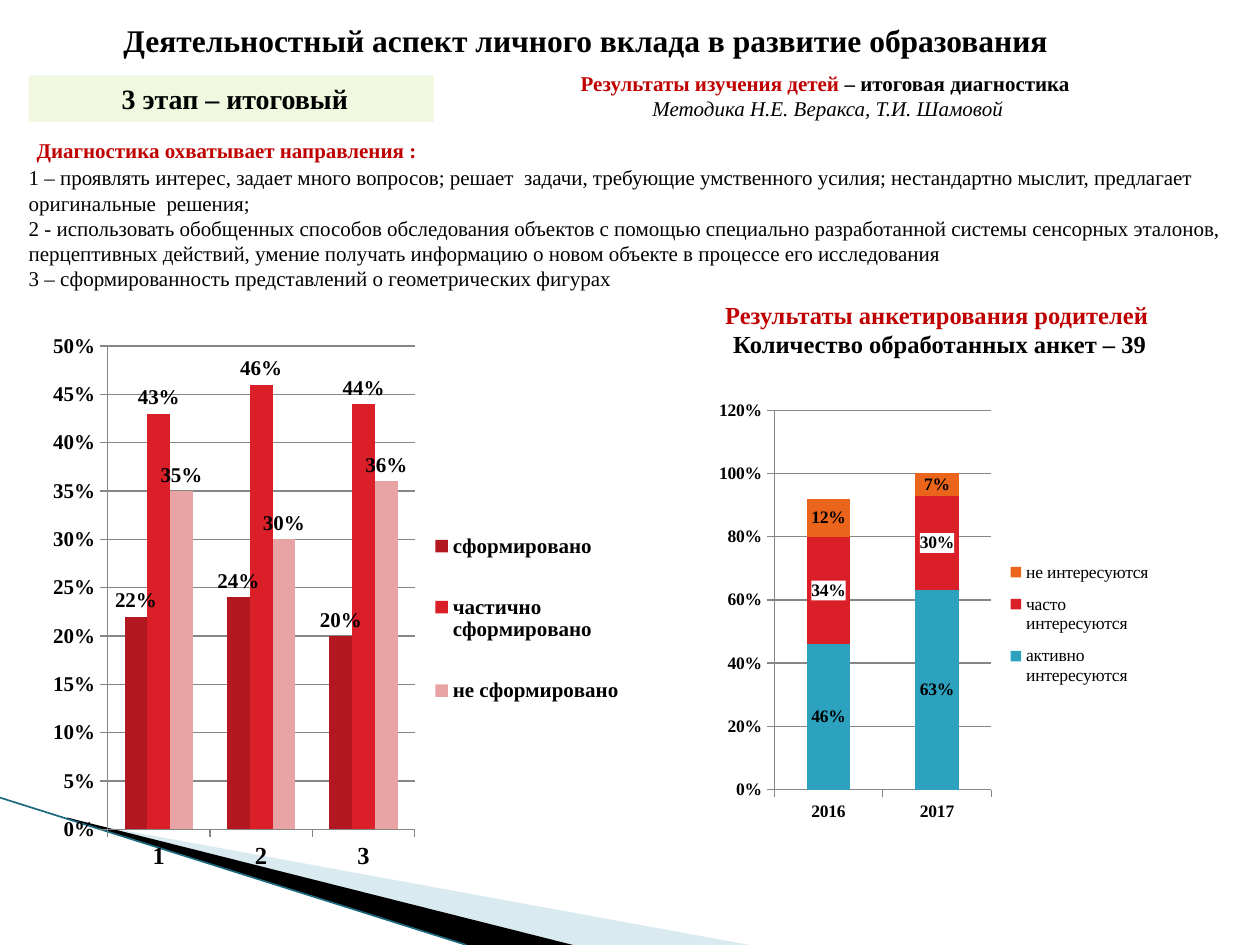
from dataclasses import dataclass

from lxml.etree import SubElement
from pptx import Presentation
from pptx.chart.data import CategoryChartData
from pptx.dml.color import RGBColor
from pptx.enum.chart import XL_CHART_TYPE, XL_LABEL_POSITION, XL_LEGEND_POSITION, XL_TICK_MARK
from pptx.enum.shapes import MSO_CONNECTOR, MSO_SHAPE
from pptx.enum.text import MSO_ANCHOR, PP_ALIGN
from pptx.oxml import parse_xml
from pptx.oxml.ns import nsdecls, qn
from pptx.util import Cm, Pt


@dataclass(frozen=True)
class Theme:
    font: str = "Times New Roman"
    black: str = "000000"
    white: str = "FFFFFF"
    accent: str = "C00000"
    stage: str = "F0F9DF"
    grid: str = "868686"
    pale_wedge: str = "A0CBDC"
    edge: str = "1A6A7F"
    title: int = 18
    stage_size: int = 16
    heading: int = 14
    body: int = 12
    small: int = 10


@dataclass(frozen=True)
class Box:
    left: float
    top: float
    width: float
    height: float

    def lengths(self):
        return [Cm(value) for value in (self.left, self.top, self.width, self.height)]


THEME = Theme()
CHILD_SERIES = [
    ("сформировано", (0.22, 0.24, 0.20), "B31820"),
    ("частично сформировано", (0.43, 0.46, 0.44), "DA1F28"),
    ("не сформировано", (0.35, 0.30, 0.36), "E8A3A5"),
]
PARENT_SERIES = [
    ("активно интересуются", (0.46, 0.63), "2DA2BF"),
    ("часто интересуются", (0.34, 0.30), "DA1F28"),
    ("не интересуются", (0.12, 0.07), "EB641B"),
]


def rgb(value):
    return RGBColor.from_string(value)


def style_font(font, size, color=THEME.black, bold=False, italic=False):
    font.name, font.size, font.bold, font.italic = THEME.font, Pt(size), bold, italic
    font.color.rgb = rgb(color)


def add_text(page, box, paragraphs, fill=THEME.white, align=PP_ALIGN.CENTER, wrap=True):
    """Each paragraph is a list of (text, size, color, bold, italic) runs."""
    shape = page.shapes.add_shape(MSO_SHAPE.RECTANGLE, *box.lengths())
    shape.shadow.inherit = False
    shape.fill.solid()
    shape.fill.fore_color.rgb = rgb(fill)
    shape.line.fill.background()
    frame = shape.text_frame
    frame.word_wrap = wrap
    frame.vertical_anchor = MSO_ANCHOR.TOP
    for index, spans in enumerate(paragraphs):
        para = frame.paragraphs[0] if index == 0 else frame.add_paragraph()
        para.alignment = align
        for text, *style in spans:
            span = para.add_run()
            span.text = text
            style_font(span.font, *style)


def add_corner(page, box):
    """Two wedges and a thin edge line rising to the left."""
    pale = [(1.4, 0.46), (box.width, box.height), (11.5, box.height), (1.4, 0.43)]
    dark = [(1.35, 0.4), (11.55, box.height), (9.4, box.height), (1.37, 0.43)]
    for points, color, alpha in ((pale, THEME.pale_wedge, 40), (dark, THEME.black, 100)):
        corners = [(Cm(box.left + x), Cm(box.top + y)) for x, y in points]
        builder = page.shapes.build_freeform(*corners[0])
        builder.add_line_segments(corners[1:], close=True)
        wedge = builder.convert_to_shape()
        wedge.shadow.inherit = False
        wedge.line.fill.background()
        wedge.fill.solid()
        wedge.fill.fore_color.rgb = rgb(color)
        if alpha < 100:
            tint = next(wedge._element.spPr.iter(qn("a:srgbClr")))
            SubElement(tint, qn("a:alpha")).set("val", str(alpha * 1000))
    edge = page.shapes.add_connector(
        MSO_CONNECTOR.STRAIGHT, Cm(box.left), Cm(box.top),
        Cm(box.left + 9.4), Cm(box.top + box.height))
    edge.line.color.rgb = rgb(THEME.edge)
    edge.line.width = Pt(0.95)
    SubElement(edge._element.spPr, qn("a:effectLst"))


def set_layout(parent, position, fractions, inner=False):
    """Fix a plot area or legend at fractions (x, y, w, h) of its chart."""
    previous = parent.find(qn("c:layout"))
    if previous is not None:
        parent.remove(previous)
    target = '<c:layoutTarget val="inner"/>' if inner else ""
    modes = '<c:xMode val="edge"/><c:yMode val="edge"/>'
    sizes = "".join(f'<c:{key} val="{value}"/>' for key, value in zip("xywh", fractions))
    parent.insert(position, parse_xml(
        f'<c:layout {nsdecls("c")}><c:manualLayout>{target}{modes}{sizes}'
        "</c:manualLayout></c:layout>"))


def fill_labels(labels, color):
    backing = parse_xml(
        f'<c:spPr {nsdecls("c", "a")}><a:solidFill><a:srgbClr val="{color}"/>'
        "</a:solidFill></c:spPr>")
    labels._element.find(qn("c:txPr")).addprevious(backing)


def add_columns(page, box, kind, categories, series_rows, size, category_size,
                top_value, step, plot_area, legend_area, bold_legend):
    data = CategoryChartData(number_format="0%")
    data.categories = categories
    for name, values, _ in series_rows:
        data.add_series(name, values)
    chart = page.shapes.add_chart(kind, *box.lengths(), data).chart
    style_font(chart.font, size)
    chart.has_title = False
    stacked = kind == XL_CHART_TYPE.COLUMN_STACKED
    plot = chart.plots[0]
    plot.vary_by_categories = False
    plot.gap_width = 150
    plot.overlap = 100 if stacked else 0
    for series, (_, _, color) in zip(plot.series, series_rows):
        series.format.fill.solid()
        series.format.fill.fore_color.rgb = rgb(color)
        series.invert_if_negative = False
        labels = series.data_labels
        style_font(labels.font, size, bold=True)
        labels.show_value = True
        labels.number_format, labels.number_format_is_linked = "0%", False
        labels.position = XL_LABEL_POSITION.CENTER if stacked else XL_LABEL_POSITION.OUTSIDE_END
    if stacked:
        fill_labels(plot.series[1].data_labels, THEME.white)

    values = chart.value_axis
    values.minimum_scale, values.maximum_scale, values.major_unit = 0, top_value, step
    values.major_gridlines.format.line.color.rgb = rgb(THEME.grid)
    values.tick_labels.number_format = "0%"
    values.tick_labels.number_format_is_linked = False
    for axis, label_size in ((values, size), (chart.category_axis, category_size)):
        axis.major_tick_mark = XL_TICK_MARK.OUTSIDE
        axis.format.line.color.rgb = rgb(THEME.grid)
        style_font(axis.tick_labels.font, label_size, bold=True)
    chart.has_legend = True
    chart.legend.position = XL_LEGEND_POSITION.RIGHT
    chart.legend.include_in_layout = False
    style_font(chart.legend.font, size, bold=bold_legend)
    set_layout(chart.legend._element, 1, legend_area)
    set_layout(chart._chartSpace.chart.plotArea, 0, plot_area, inner=True)


def add_diagnostics(page, box):
    heading = [
        (" ", THEME.title, THEME.accent, True),
        ("Диагностика охватывает направления :", THEME.body, THEME.accent, True),
    ]
    directions = (
        "1 – проявлять интерес, задает много вопросов; решает  задачи, требующие умственного усилия; нестандартно мыслит, предлагает оригинальные  решения;",
        "2 - использовать обобщенных способов обследования объектов с помощью специально разработанной системы сенсорных эталонов, перцептивных действий, умение получать информацию о новом объекте в процессе его исследования",
        "3 – сформированность представлений о геометрических фигурах",
    )
    lines = [[(text, THEME.body)] for text in directions]
    add_text(page, box, [heading, *lines], align=PP_ALIGN.LEFT)


def main():
    deck = Presentation()
    deck.slide_width, deck.slide_height = Cm(25.4), Cm(19.05)
    page = deck.slides.add_slide(deck.slide_layouts[6])
    add_corner(page, Box(0, 16.08, 15.11, 2.97))
    add_text(page, Box(2.24, 0.3, 19.2, 1.02), [[
        ("Деятельностный аспект личного вклада в развитие образования",
         THEME.title, THEME.black, True)]], align=PP_ALIGN.LEFT, wrap=False)
    add_diagnostics(page, Box(0.33, 2.44, 24.87, 3.68))
    add_text(page, Box(13.41, 5.92, 10.95, 1.78), [
        [("Результаты анкетирования родителей", THEME.heading, THEME.accent, True)],
        [(" Количество обработанных анкет – 39", THEME.heading, THEME.black, True)]])
    add_text(page, Box(0.58, 1.52, 8.31, 0.94), [
        [("3 этап – итоговый", THEME.stage_size, THEME.black, True)]], fill=THEME.stage)
    add_text(page, Box(8.74, 1.3, 15.9, 1.27), [
        [("Результаты изучения детей ", THEME.body, THEME.accent, True),
         ("– итоговая диагностика ", THEME.body, THEME.black, True)],
        [("Методика Н.Е. Веракса, Т.И. Шамовой", THEME.body, THEME.black, False, True)]])
    add_columns(page, Box(0.86, 6.53, 11.91, 11.2), XL_CHART_TYPE.COLUMN_CLUSTERED,
                ("1", "2", "3"), CHILD_SERIES, THEME.body, THEME.heading, 0.5, 0.05,
                (0.11, 0.04, 0.52, 0.87), (0.65, 0.31, 0.34, 0.44), True)
    add_columns(page, Box(14.33, 7.92, 9.12, 8.79), XL_CHART_TYPE.COLUMN_STACKED,
                ("2016", "2017"), PARENT_SERIES, THEME.small, THEME.small, 1.2, 0.2,
                (0.14, 0.04, 0.48, 0.87), (0.65, 0.36, 0.33, 0.34), False)
    deck.save("out.pptx")


if __name__ == "__main__":
    main()
